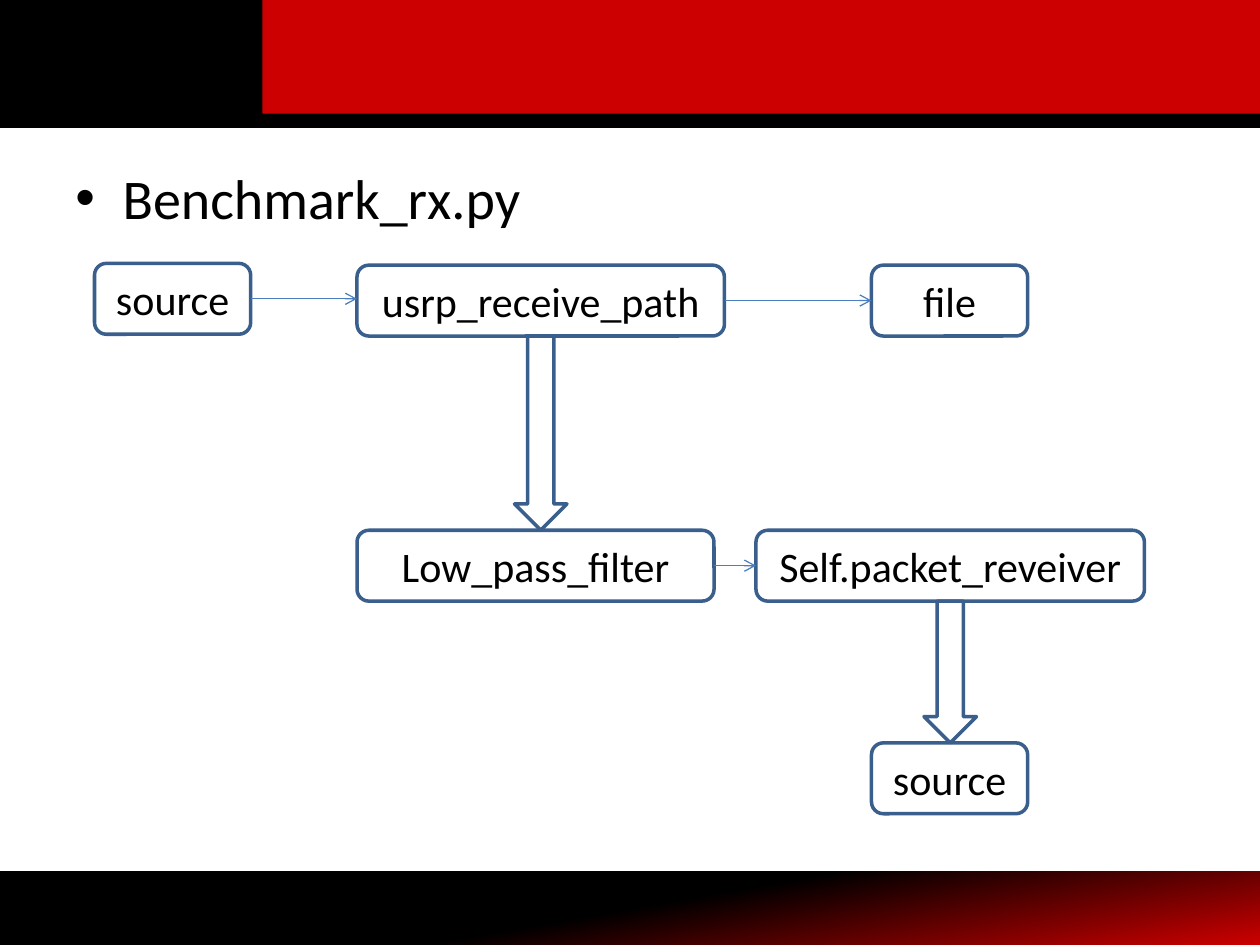
from lxml import etree
from pptx import Presentation
from pptx.dml.color import RGBColor
from pptx.enum.shapes import MSO_CONNECTOR, MSO_SHAPE
from pptx.enum.text import MSO_ANCHOR, PP_ALIGN
from pptx.oxml.ns import qn
from pptx.util import Pt

RECT, ROUNDED, DOWN = MSO_SHAPE.RECTANGLE, MSO_SHAPE.ROUNDED_RECTANGLE, MSO_SHAPE.DOWN_ARROW
STRAIGHT = MSO_CONNECTOR.STRAIGHT
LEFT, CENTER = PP_ALIGN.LEFT, PP_ALIGN.CENTER
TOP, MIDDLE = MSO_ANCHOR.TOP, MSO_ANCHOR.MIDDLE

BLACK, RED, OUTLINE, LINK = "000000", "CC0000", "3A5F8C", "4B7EBC"
WIDTH, HEIGHT = 720, 540
NODE_HEIGHT = 40.5


def color(hex_string):
    """Return the colour for a hex string."""
    return RGBColor.from_string(hex_string)


def write(frame, text, size=24, align=CENTER, anchor=MIDDLE, bullet=None, indent=0):
    """Write one formatted paragraph into a text frame."""
    frame.word_wrap = True
    frame.vertical_anchor = anchor
    paragraph = frame.paragraphs[0]
    paragraph.text = text
    paragraph.alignment = align
    if bullet:
        properties = paragraph._p.get_or_add_pPr()
        properties.set("marL", str(Pt(indent)))
        properties.set("indent", str(-Pt(indent)))
        etree.SubElement(properties, qn("a:buFont")).set("typeface", "Arial")
        etree.SubElement(properties, qn("a:buChar")).set("char", bullet)
    font = paragraph.runs[0].font
    font.name, font.size, font.color.rgb = "Calibri", Pt(size), color(BLACK)


def add_block(slide, kind, box, fill=None, line=None):
    """Add a flat preset shape with an optional fill and outline."""
    block = slide.shapes.add_shape(kind, *map(Pt, box))
    block.shadow.inherit = False
    if fill:
        block.fill.solid()
        block.fill.fore_color.rgb = color(fill)
    else:
        block.fill.background()
    if line:
        block.line.color.rgb, block.line.width = color(line), Pt(2)
    else:
        block.line.fill.background()
    return block


def add_header(slide, left, top, width, height):
    """Draw the black band with its red panel."""
    add_block(slide, RECT, (left, top, width, height), BLACK, BLACK)
    inset = 150
    add_block(slide, RECT, (left + inset, top - 0.5, width - inset, height - 6.5), RED)


def add_footer(slide, left, top, width, height):
    """Draw the band that fades from black to red."""
    band = add_block(slide, RECT, (left, top, width, height), BLACK)
    band.fill.gradient()
    band.fill.gradient_angle = 280
    for stop, position, shade in zip(band.fill.gradient_stops, (0.5, 1), (BLACK, RED)):
        stop.position, stop.color.rgb = position, color(shade)


def add_heading(slide, left, top, width, height):
    """Place the bulleted script name."""
    heading = slide.shapes.add_textbox(*map(Pt, (left, top, width, height)))
    write(heading.text_frame, "Benchmark_rx.py", size=32, align=LEFT, anchor=TOP,
          bullet="•", indent=27)


def add_link(slide, start, end, y):
    """Draw a thin horizontal arrow."""
    link = slide.shapes.add_connector(STRAIGHT, *map(Pt, (start, y, end, y)))
    link.line.color.rgb, link.line.width = color(LINK), Pt(0.75)
    etree.SubElement(link.line._get_or_add_ln(), qn("a:tailEnd")).set("type", "arrow")
    etree.SubElement(link._element.spPr, qn("a:effectLst"))


def add_flow(slide, left, top):
    """Draw the receiver flow from its top left corner."""
    nodes = {
        "input": ("source", 0, 0, 89.25),
        "path": ("usrp_receive_path", 150, 1, 210),
        "filter": ("Low_pass_filter", 150, 152.5, 204),
        "output": ("source", 444, 274, 89.25),
        "file": ("file", 444, 1, 89.25),
        "receiver": ("Self.packet_reveiver", 378, 152.5, 222),
    }
    for label, x, y, width in nodes.values():
        node = add_block(slide, ROUNDED, (left + x, top + y, width, NODE_HEIGHT), line=OUTLINE)
        write(node.text_frame, label)

    for origin, target in (("input", "path"), ("path", "file"), ("filter", "receiver")):
        _, x, y, width = nodes[origin]
        add_link(slide, left + x + width, left + nodes[target][1], top + y + NODE_HEIGHT / 2)

    arrow_width = 30
    for origin, target, center in (("path", "filter", 255), ("receiver", "output", 489)):
        start = nodes[origin][2] + NODE_HEIGHT
        add_block(slide, DOWN, (left + center - arrow_width / 2, top + start,
                                arrow_width, nodes[target][2] - start), line=OUTLINE)


def main():
    """Build and save the slide."""
    deck = Presentation()
    deck.slide_width, deck.slide_height = Pt(WIDTH), Pt(HEIGHT)
    slide = deck.slides.add_slide(deck.slide_layouts[6])
    add_footer(slide, 0, 498, WIDTH, 42)
    add_header(slide, 0, 0, WIDTH, 72)
    add_heading(slide, 36, 90, 648, 392)
    add_flow(slide, 54, 150.5)
    deck.save("out.pptx")


if __name__ == "__main__":
    main()
